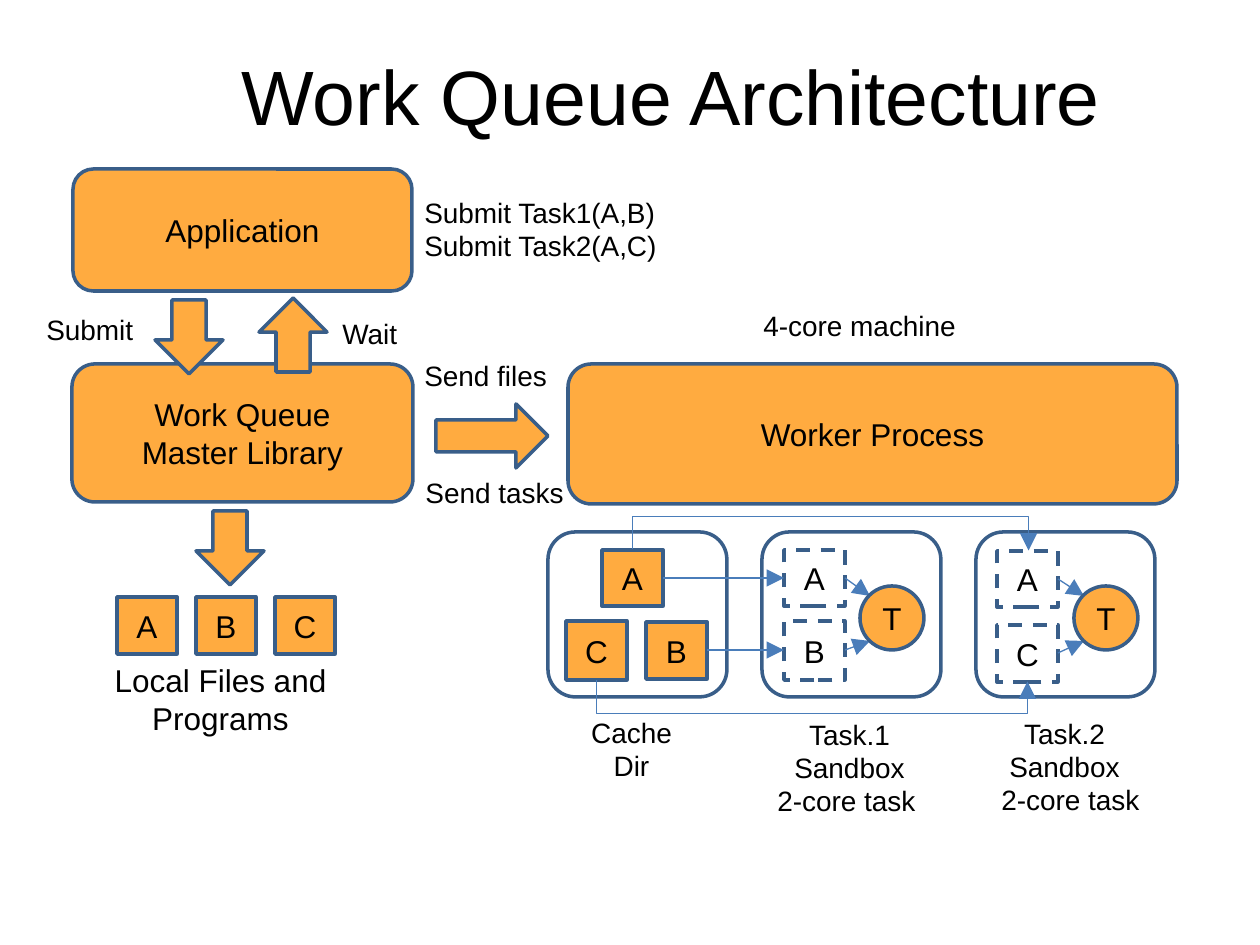
import pptx
import pptx.dml.color
import pptx.enum.dml
import pptx.enum.shapes
import pptx.enum.text
import pptx.oxml.ns
import pptx.util
from lxml import etree

SCALE = 914400 / 126  # EMU in one px
ORANGE = pptx.dml.color.RGBColor(0xFF, 0xAB, 0x40)
NAVY = pptx.dml.color.RGBColor(0x39, 0x5E, 0x89)
BLUE = pptx.dml.color.RGBColor(0x4A, 0x7D, 0xBA)
BLACK = pptx.dml.color.RGBColor(0, 0, 0)

SHAPE = pptx.enum.shapes.MSO_SHAPE
CONNECTOR = pptx.enum.shapes.MSO_CONNECTOR
ALIGN = pptx.enum.text.PP_ALIGN
ANCHOR = pptx.enum.text.MSO_ANCHOR
qn = pptx.oxml.ns.qn


def px(*lengths):
    return [pptx.util.Emu(round(n * SCALE)) for n in lengths]


def set_all(target, values):
    for name, value in values.items():
        setattr(target, name, value)


class Diagram:
    """Holds the style and the slide being drawn."""

    font = {"name": "Arial"}
    outline = {"width": pptx.util.Pt(2)}
    thin = {"width": pptx.util.Pt(0.75)}

    def __init__(self, prs):
        self.s = prs.slides.add_slide(prs.slide_layouts[6])

    def fill_text(self, tf, lines, size, align, anchor):
        set_all(tf, {"word_wrap": True, "vertical_anchor": anchor})
        for i, line in enumerate(lines.split("\n")):
            p = tf.paragraphs[0] if i == 0 else tf.add_paragraph()
            p.alignment = align
            r = p.add_run()
            r.text = line
            set_all(r.font, {**self.font, "size": pptx.util.Pt(size)})
            r.font.color.rgb = BLACK

    def label(self, box, lines, size=16, align=ALIGN.LEFT):
        sp = self.s.shapes.add_textbox(*px(*box))
        self.fill_text(sp.text_frame, lines, size, align, ANCHOR.TOP)

    def shape(self, kind, box, text="", filled=True, dashed=False, rotation=0):
        sp = self.s.shapes.add_shape(kind, *px(*box))
        sp.shadow.inherit = False
        sp.rotation = rotation
        if filled:
            sp.fill.solid()
            sp.fill.fore_color.rgb = ORANGE
        else:
            sp.fill.background()
        sp.line.color.rgb = NAVY
        set_all(sp.line, self.outline)
        if dashed:
            sp.line.dash_style = pptx.enum.dml.MSO_LINE.DASH
        if text:
            self.fill_text(sp.text_frame, text, 18, ALIGN.CENTER, ANCHOR.MIDDLE)

    def panel(self, box, text="", filled=True):
        self.shape(SHAPE.ROUNDED_RECTANGLE, box, text, filled)

    def file(self, box, name, cached=True):
        self.shape(SHAPE.RECTANGLE, box, name, cached, not cached)

    def arrow(self, start, end, kind=CONNECTOR.STRAIGHT):
        cn = self.s.shapes.add_connector(kind, *px(*start, *end))
        cn.line.color.rgb = BLUE
        set_all(cn.line, self.thin)
        spPr = cn._element.spPr
        etree.SubElement(spPr.find(qn("a:ln")), qn("a:tailEnd"),
                         type="triangle", w="lg", len="lg")
        etree.SubElement(spPr, qn("a:effectLst"))
        return cn

    def bracket_arrow(self, x1, x2, y, bend):
        """U-shaped arrow between two points at height y, bending by bend px."""
        mid, span = (x1 + x2) / 2, x2 - x1
        cn = self.arrow((mid, y - span / 2), (mid + 1, y + span / 2),
                        CONNECTOR.ELBOW)
        spPr = cn._element.spPr
        xfrm = spPr.find(qn("a:xfrm"))
        xfrm.set("rot", "16200000")
        xfrm.set("flipH", "1")
        geom = spPr.find(qn("a:prstGeom"))
        guides = geom.find(qn("a:avLst"))
        if guides is None:
            guides = etree.SubElement(geom, qn("a:avLst"))
        etree.SubElement(guides, qn("a:gd"), name="adj1",
                         fmla=f"val {bend * 100000}")

    def sandbox(self, left, title, title_box, cores_box, files):
        """Task sandbox: its linked files feed the round task T."""
        self.panel((left, 532, 179, 165), filled=False)
        for name, box, target_y in files:
            self.file(box, name, cached=False)
            x, y, w, h = box
            self.arrow((x + w, y + h // 2), (left + 108, target_y))
        self.shape(SHAPE.OVAL, (left + 98, 586, 64, 64), "T")
        self.label(title_box, f"{title}\nSandbox", align=ALIGN.CENTER)
        self.label(cores_box, "2-core task")


def main():
    prs = pptx.Presentation()
    prs.slide_width, prs.slide_height = px(1260, 945)
    d = Diagram(prs)

    d.label((229, 42, 893, 106), "Work Queue Architecture", 44)

    d.panel((73, 169, 339, 122), "Application")
    d.panel((72, 364, 341, 138), "Work Queue\nMaster Library")
    d.panel((568, 364, 609, 140), "Worker Process")

    for x, y, rotation in ((155, 300, 0), (259, 298, 180), (196, 511, 0)):
        d.shape(SHAPE.DOWN_ARROW, (x, y, 68, 74), rotation=rotation)
    d.shape(SHAPE.RIGHT_ARROW, (436, 404, 112, 64))

    for box, text in (
        ((412, 189, 290, 89), "Submit Task1(A,B)\nSubmit Task2(A,C)"),
        ((34, 306, 125, 50), "Submit"),
        ((330, 310, 88, 50), "Wait"),
        ((412, 352, 165, 50), "Send files"),
        ((413, 469, 183, 50), "Send tasks"),
        ((751, 302, 244, 50), "4-core machine"),
    ):
        d.label(box, text)

    for i, name in enumerate("ABC"):
        d.file((117 + 79 * i, 597, 60, 57), name)
    d.label((58, 655, 325, 89), "Local Files and Programs", 18, ALIGN.CENTER)

    d.panel((548, 532, 179, 165), filled=False)
    d.file((602, 550, 61, 56), "A")
    d.file((566, 621, 61, 59), "C")
    d.file((646, 622, 61, 57), "B")
    d.label((573, 709, 117, 89), "Cache\nDir", align=ALIGN.CENTER)

    d.sandbox(762, "Task.1", (774, 711, 151, 89), (765, 777, 183, 50),
              (("A", (784, 550, 61, 56), 596), ("B", (784, 621, 61, 59), 641)))
    d.sandbox(976, "Task.2", (989, 710, 151, 89), (989, 776, 183, 50),
              (("A", (997, 551, 61, 56), 596), ("C", (997, 625, 61, 57), 641)))

    d.arrow((663, 578), (784, 578))
    d.arrow((707, 650), (784, 650))
    d.bracket_arrow(632, 1028, 550, -33)
    d.bracket_arrow(596, 1027, 681, 33)

    prs.save("out.pptx")


if __name__ == "__main__":
    main()
